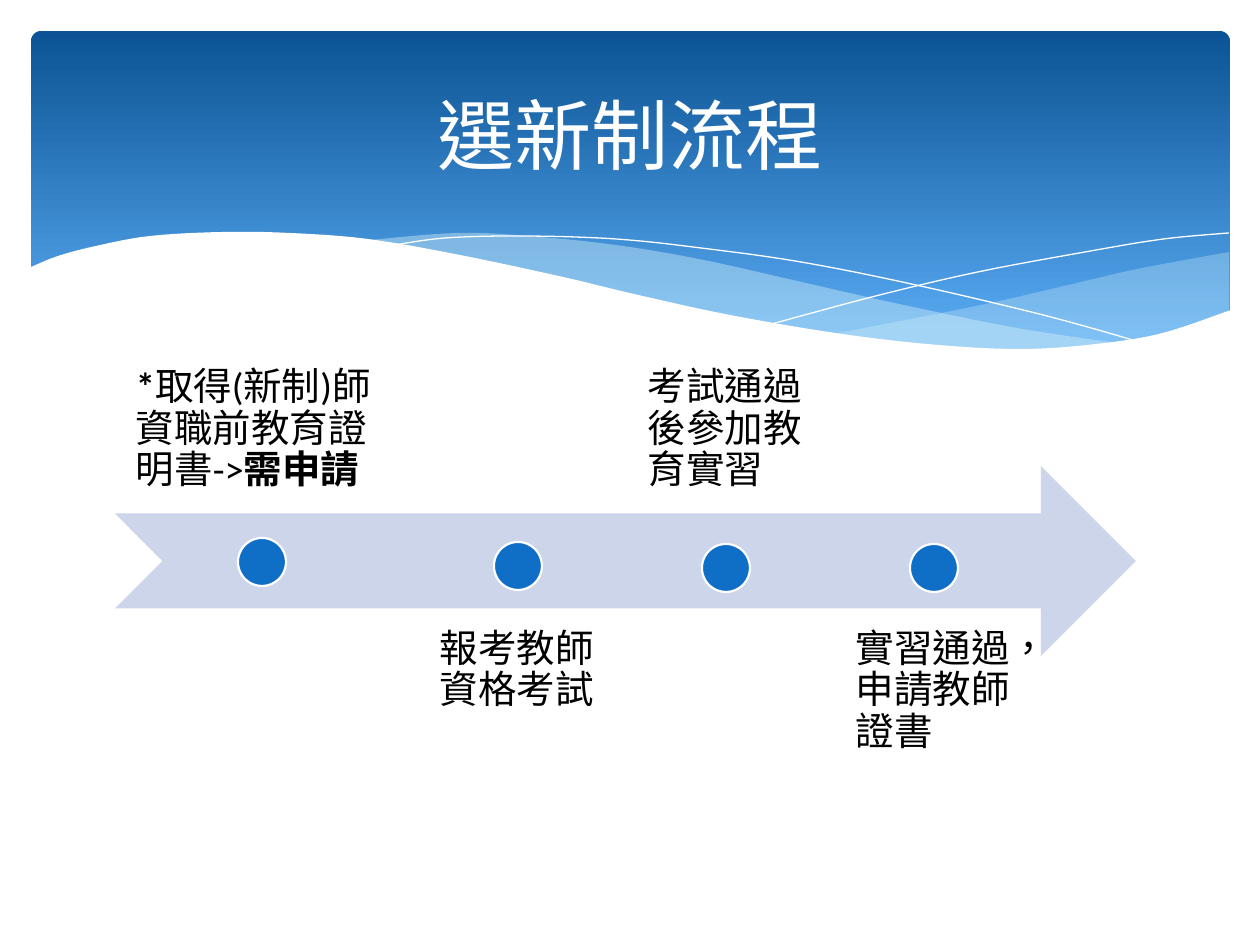
from pptx import Presentation
from pptx.dml.color import RGBColor
from pptx.enum.lang import MSO_LANGUAGE_ID
from pptx.enum.shapes import MSO_SHAPE
from pptx.enum.text import MSO_ANCHOR, PP_ALIGN
from pptx.util import Pt
from pptx.oxml.ns import qn
from lxml import etree

ROUNDED = MSO_SHAPE.ROUNDED_RECTANGLE
ARROW = MSO_SHAPE.NOTCHED_RIGHT_ARROW
OVAL = MSO_SHAPE.OVAL
TOP, MIDDLE, BOTTOM = MSO_ANCHOR.TOP, MSO_ANCHOR.MIDDLE, MSO_ANCHOR.BOTTOM
LEFT, CENTER = PP_ALIGN.LEFT, PP_ALIGN.CENTER
CHINESE = MSO_LANGUAGE_ID.TRADITIONAL_CHINESE
PX = 914400 // 126

TITLE = "選新制流程"
STEPS = [
    {"runs": [("*", True), ("取得(新制)師資職前教育證明書->", False), ("需申請", True)],
     "width": 294, "dot_top": 538},
    {"runs": [("報考教師資格考試", False)], "width": 198, "dot_top": 542},
    {"runs": [("考試通過後參加教育實習", False)], "width": 198, "dot_top": 544},
    {"runs": [("實習通過，申請教師證書", False)], "width": 198, "dot_top": 544},
]
ARROW_BOX = (115, 466, 1021, 190)
STEP_GAP = 10
DOT = 48

RIGHT_SWELL = [
    [(1229, 252), (1142, 268), (1085, 281), (981, 305), (833, 334)],
    [(833, 334), (922, 345), (1012, 350), (1087, 347), (1160, 334), (1229, 311)],
]
MIDDLE_SWELL = [
    [(1125, 344), (1017, 328), (890, 302), (793, 280), (699, 259), (616, 245),
     (529, 236), (455, 233), (360, 241)],
    [(360, 241), (456, 255), (566, 280), (713, 312), (819, 333), (910, 345),
     (1003, 350), (1068, 350), (1125, 344)],
]
FALLING_LINE = [[(389, 246), (445, 238), (524, 236), (616, 239), (701, 248),
                 (801, 262), (916, 285), (1047, 316), (1143, 343)]]
RISING_LINE = [[(772, 324), (876, 296), (978, 272), (1091, 251), (1164, 239), (1229, 233)]]
WHITE_WAVE = [
    [(1231, 310), (1159, 334), (1087, 345), (1019, 349), (938, 345), (842, 334),
     (730, 315), (634, 294), (563, 277), (460, 255), (368, 239), (290, 233),
     (223, 232), (150, 236), (96, 246), (58, 256), (29, 268)],
    [(29, 415), (1231, 415)],
]
WAVES = [
    (RIGHT_SWELL, "DBF5F9", 29, None),
    (MIDDLE_SWELL, "DBF5F9", 40, None),
    (FALLING_LINE, None, 100, "FFFFFF"),
    (RISING_LINE, None, 100, "FFFFFF"),
    (WHITE_WAVE, "FFFFFF", 100, None),
]


def color(value):
    return RGBColor.from_string(value)


def paint(shape, fill=None, line=None, width=0, opacity=100):
    shape.shadow.inherit = False
    if fill:
        shape.fill.solid()
        shape.fill.fore_color.rgb = color(fill)
        if opacity < 100:
            tone = shape.fill._xPr.find(".//" + qn("a:srgbClr"))
            etree.SubElement(tone, qn("a:alpha"), val=str(opacity * 1000))
    else:
        shape.fill.background()
    if line:
        shape.line.color.rgb = color(line)
        shape.line.width = Pt(width)
    else:
        shape.line.fill.background()


def add_shape(kind, box):
    return slide.shapes.add_shape(kind, *(value * PX for value in box))


def smooth(points, parts=6):
    if len(points) < 3:
        return points
    padded = [points[0], *points, points[-1]]
    curve = [points[0]]
    for before, start, end, after in zip(padded, padded[1:], padded[2:], padded[3:]):
        for part in range(1, parts + 1):
            t = part / parts
            curve.append(tuple(
                (2 * b + (c - a) * t + (2 * a - 5 * b + 4 * c - d) * t ** 2
                 + (3 * b - a - 3 * c + d) * t ** 3) / 2
                for a, b, c, d in zip(before, start, end, after)))
    return curve


def add_wave(edges, fill, opacity, line):
    points = [(round(x * PX), round(y * PX)) for edge in edges for x, y in smooth(edge)]
    builder = slide.shapes.build_freeform(*points[0])
    builder.add_line_segments(points[1:], close=fill is not None)
    paint(builder.convert_to_shape(), fill, line, 0, opacity)


def add_text(box, runs, size, font, tone, anchor, align, inset):
    frame = slide.shapes.add_textbox(*(value * PX for value in box)).text_frame
    frame.word_wrap = True
    frame.vertical_anchor = anchor
    frame.margin_left = frame.margin_right = inset * PX
    frame.margin_top = frame.margin_bottom = inset * PX
    paragraph = frame.paragraphs[0]
    paragraph.alignment = align
    paragraph.font.size = Pt(size)
    paragraph.font.name = font
    paragraph.font.color.rgb = color(tone)
    for text, bold in runs:
        run = paragraph.add_run()
        run.text = text
        run.font.bold = bold
        run.font.language_id = CHINESE
    return paragraph


presentation = Presentation()
presentation.slide_width = 1260 * PX
presentation.slide_height = 945 * PX
slide = presentation.slides.add_slide(presentation.slide_layouts[6])

banner = add_shape(ROUNDED, (31, 31, 1199, 340))
banner.adjustments[0] = 0.03
paint(banner)
banner.fill.gradient()
banner.fill.gradient_angle = 270
for stop, position, tone in zip(banner.fill.gradient_stops, (0, 0.9), ("0B5394", "59AAF2")):
    stop.position = position
    stop.color.rgb = color(tone)

for edges, fill, opacity, line in WAVES:
    add_wave(edges, fill, opacity, line)

paint(add_shape(ARROW, ARROW_BOX), "CCD5EA")
left, arrow_top, _, height = ARROW_BOX
band_top, band_bottom = arrow_top + height // 4, arrow_top + height * 3 // 4
for index, step in enumerate(STEPS):
    above = index % 2 == 0
    top = band_top - height if above else band_bottom
    paragraph = add_text((left, top, step["width"], height), step["runs"], 22, "Calibri",
                         "000000", BOTTOM if above else TOP, LEFT, 21)
    paragraph.line_spacing = 0.9
    dot = add_shape(OVAL, (left + (step["width"] - DOT) // 2, step["dot_top"], DOT, DOT))
    paint(dot, "0F6FC6", "FFFFFF", 1.25)
    left += step["width"] + STEP_GAP

add_text((63, 47, 1134, 173), [(TITLE, False)], 44, "Noto Sans CJK JP", "FFFFFF",
         MIDDLE, CENTER, 6)

presentation.save("out.pptx")
